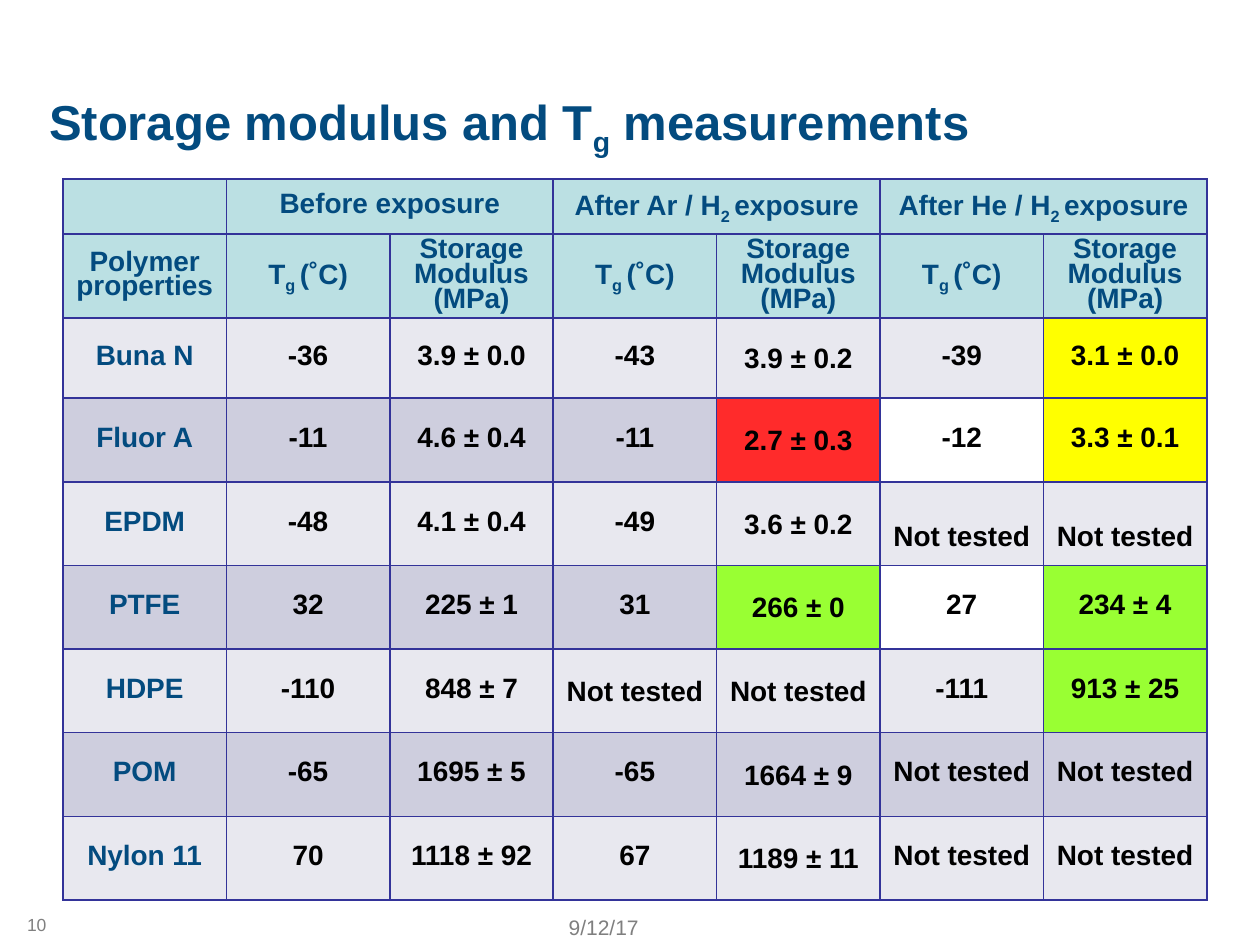
from lxml.etree import SubElement
from pptx import Presentation
from pptx.dml.color import RGBColor
from pptx.enum.text import MSO_ANCHOR, PP_ALIGN
from pptx.oxml.ns import qn
from pptx.util import Pt

# Content: text between underscores is subscript
TITLE = "Storage modulus and T_g_ measurements"
GROUPS = ["", "Before exposure", "After Ar / H_2 _exposure",
          "After He / H_2 _exposure"]
HEADS = ["Polymer properties"] + ["T_g _(˚C)", "Storage Modulus (MPa)"] * 3
NONE = "Not tested"
DATA = [
    ["Buna N", "-36", "3.9 ± 0.0", "-43", "3.9 ± 0.2", "-39", "3.1 ± 0.0"],
    ["Fluor A", "-11", "4.6 ± 0.4", "-11", "2.7 ± 0.3", "-12", "3.3 ± 0.1"],
    ["EPDM", "-48", "4.1 ± 0.4", "-49", "3.6 ± 0.2", NONE, NONE],
    ["PTFE", "32", "225 ± 1", "31", "266 ± 0", "27", "234 ± 4"],
    ["HDPE", "-110", "848 ± 7", NONE, NONE, "-111", "913 ± 25"],
    ["POM", "-65", "1695 ± 5", "-65", "1664 ± 9", NONE, NONE],
    ["Nylon 11", "70", "1118 ± 92", "67", "1189 ± 11", NONE, NONE],
]

HUES = {"navy": "034B7F", "head": "BBE0E3", "light": "E8E8EF",
        "dark": "CECEDE", "yellow": "FFFF00", "red": "FF0000",
        "green": "99FF33", "line": "333399", "black": "000000",
        "date": "7F7F7F", "page": "808080"}

# Exceptions by (data row, column)
MARKS = {(0, 6): "yellow", (1, 6): "yellow", (1, 4): "red", (1, 5): None,
         (3, 4): "green", (3, 5): None, (3, 6): "green", (4, 6): "green"}
DROPS = {(row, 4): 3.5 for row in range(len(DATA))}
DROPS.update({(4, 3): 3.5, (2, 5): 18, (2, 6): 18})

LEFT, TOP, WIDE = 36, 102.25, 93.4
HIGHS = [31.5, 48, 45.8] + [47.8] * 6
CELL = {"margin_left": Pt(5), "margin_right": Pt(5), "margin_top": 0,
        "margin_bottom": 0, "vertical_anchor": MSO_ANCHOR.MIDDLE}
PARA = {"alignment": PP_ALIGN.CENTER, "line_spacing": 0.8}


def apply(item, values):
    for name, value in values.items():
        setattr(item, name, value)


def color(name):
    return RGBColor.from_string(HUES[name])


def write(para, text, size, hue, bold=True):
    for i, part in enumerate(text.split("_")):
        if not part:
            continue
        run = para.add_run()
        run.text = part
        apply(run.font, {"name": "Arial", "size": Pt(size), "bold": bold})
        run.font.color.rgb = color(hue)
        if i % 2:
            run.font._element.set("baseline", "-25000")


def label(box, text, size, hue, bold, align, anchor, inset=3.6):
    frame = slide.shapes.add_textbox(*map(Pt, box)).text_frame
    apply(frame, {"word_wrap": True, "vertical_anchor": anchor,
                  "margin_top": Pt(inset)})
    para = frame.paragraphs[0]
    para.alignment = align
    write(para, text, size, hue, bold)


def paint(cell, hue):
    # Borders go in ahead of the fill
    props = cell._tc.get_or_add_tcPr()
    for side in ("a:lnL", "a:lnR", "a:lnT", "a:lnB"):
        line = SubElement(props, qn(side), w=str(Pt(1)))
        fill = SubElement(line, qn("a:solidFill"))
        SubElement(fill, qn("a:srgbClr"), val=HUES["line"])
    if hue is None:
        cell.fill.background()
        return
    cell.fill.solid()
    cell.fill.fore_color.rgb = color(hue)
    if hue == "red":
        SubElement(props.find(".//" + qn("a:srgbClr") + "[@val='FF0000']"),
                   qn("a:alpha"), val="83000")


deck = Presentation()
apply(deck, {"slide_width": Pt(720), "slide_height": Pt(540)})
slide = deck.slides.add_slide(deck.slide_layouts[6])

# Title
label((21, 45.4, 672, 62), TITLE, 28, "navy", True, PP_ALIGN.LEFT,
      MSO_ANCHOR.TOP, 7)

# Table grid
tops = [GROUPS[0]]
for group in GROUPS[1:]:
    tops += [group, ""]
rows = [tops, HEADS] + DATA
count = len(HEADS)
table = slide.shapes.add_table(len(rows), count, Pt(LEFT), Pt(TOP),
                               Pt(WIDE * count), Pt(sum(HIGHS))).table
apply(table, {"first_row": False, "horz_banding": False})
for col in table.columns:
    col.width = Pt(WIDE)
for row, high in zip(table.rows, HIGHS):
    row.height = Pt(high)
for c in range(1, count, 2):
    table.cell(0, c).merge(table.cell(0, c + 1))

# Table cells
for r, row in enumerate(rows):
    for c, text in enumerate(row):
        cell, key = table.cell(r, c), (r - 2, c)
        base = "head" if r < 2 else ("light", "dark")[r % 2]
        apply(cell, CELL)
        cell.margin_top = Pt(DROPS.get(key, 0))
        paint(cell, MARKS.get(key, base))
        para = cell.text_frame.paragraphs[0]
        apply(para, PARA)
        write(para, text, 16, "navy" if r < 2 or c == 0 else "black")

# Footer
for box, text, size, hue in [((270, 520.5, 150, 18), "9/12/17", 12, "date"),
                             ((0, 519, 42, 18), "10", 10, "page")]:
    label(box, text, size, hue, False, PP_ALIGN.CENTER, MSO_ANCHOR.MIDDLE)

deck.save("out.pptx")
